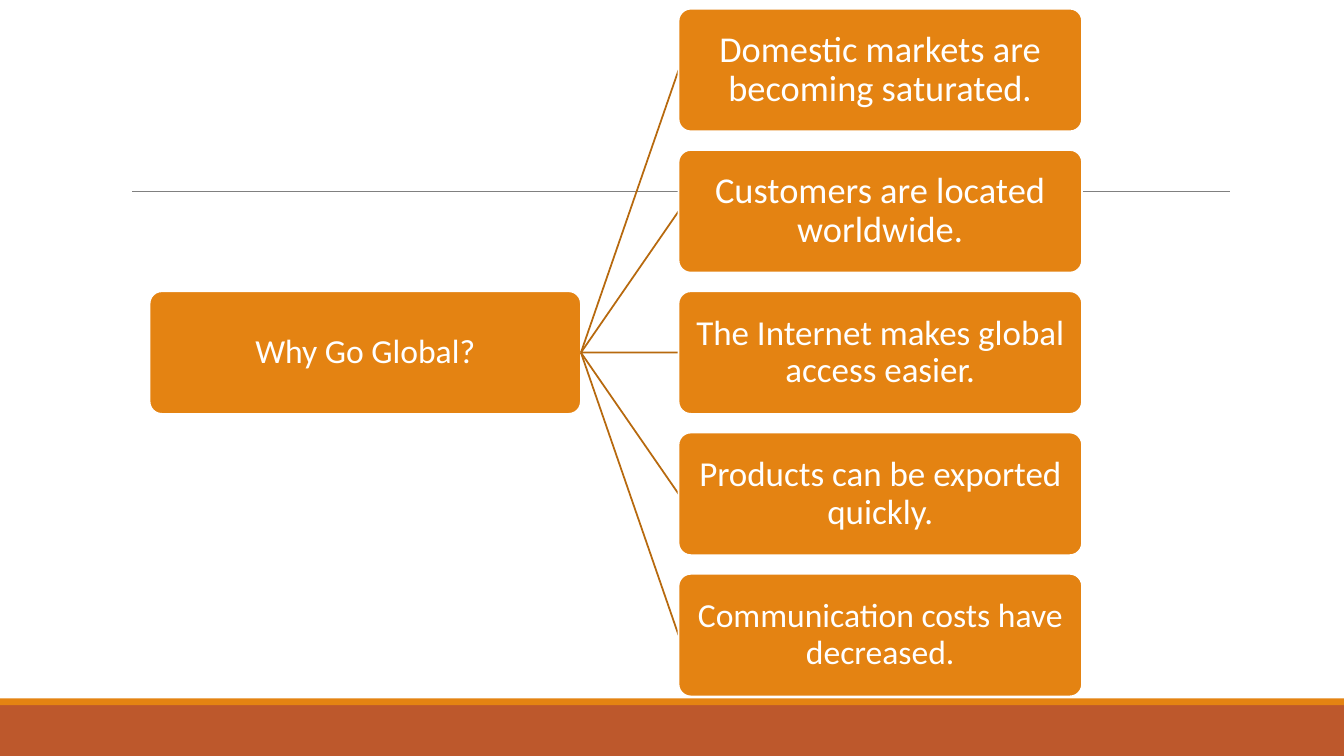
from dataclasses import dataclass

from lxml import etree
from pptx import Presentation
from pptx.dml.color import RGBColor
from pptx.enum.shapes import MSO_CONNECTOR, MSO_SHAPE
from pptx.enum.text import MSO_ANCHOR, PP_ALIGN
from pptx.oxml.ns import qn
from pptx.util import Cm, Pt

RECT = MSO_SHAPE.RECTANGLE
ROUND = MSO_SHAPE.ROUNDED_RECTANGLE
LINE = MSO_CONNECTOR.STRAIGHT
MIDDLE = MSO_ANCHOR.MIDDLE
CENTER = PP_ALIGN.CENTER


@dataclass(frozen=True)
class Theme:
    """Colours, font and sizes of the slide."""
    font: str = "Calibri"
    white: RGBColor = RGBColor(0xFF, 0xFF, 0xFF)
    orange: RGBColor = RGBColor(0xE4, 0x83, 0x12)
    rust: RGBColor = RGBColor(0xBD, 0x58, 0x2C)
    brown: RGBColor = RGBColor(0xB7, 0x69, 0x0E)
    gray: RGBColor = RGBColor(0x80, 0x80, 0x80)
    thin: float = 0.5
    thick: float = 1.25
    small: int = 24
    medium: int = 25
    large: int = 26


THEME = Theme()
WIDTH, HEIGHT = 33.87, 19.05
ROOT = "Why Go Global?"
REASONS = [
    ("Domestic markets are becoming saturated.", THEME.large),
    ("Customers are located worldwide.", THEME.large),
    ("The Internet makes global access easier.", THEME.medium),
    ("Products can be exported quickly.", THEME.medium),
    ("Communication costs have decreased.", THEME.small),
]


def add_block(slide, kind, box, fill):
    """Add a filled shape without outline or shadow."""
    shape = slide.shapes.add_shape(kind, *map(Cm, box))
    shape.shadow.inherit = False
    shape.fill.solid()
    shape.fill.fore_color.rgb = fill
    shape.line.fill.background()
    return shape


def add_line(slide, start, end, color, width):
    """Add a straight line between two points."""
    line = slide.shapes.add_connector(LINE, *map(Cm, (*start, *end)))
    line.line.color.rgb = color
    line.line.width = Pt(width)
    etree.SubElement(line._element.spPr, qn("a:effectLst"))


def add_node(slide, box, text, size):
    """Add a rounded box with centred text."""
    node = add_block(slide, ROUND, box, THEME.orange)
    node.adjustments[0] = 0.1
    node.line.color.rgb = THEME.white
    node.line.width = Pt(THEME.thick)
    frame = node.text_frame
    frame.word_wrap = True
    frame.vertical_anchor = MIDDLE
    frame.margin_left = frame.margin_right = Cm(0.05)
    frame.margin_top = frame.margin_bottom = Cm(0.05)
    para = frame.paragraphs[0]
    para.text = text
    para.alignment = CENTER
    para.line_spacing = 0.9
    para.font.name = THEME.font
    para.font.size = Pt(size)
    para.font.color.rgb = THEME.white


def add_footer(slide, box):
    """Add the two-tone band along the bottom."""
    left, top, width, height = box
    strip = 0.17
    add_block(slide, RECT, (left, top + strip, width, height - strip), THEME.rust)
    add_block(slide, RECT, (left, top, width, strip), THEME.orange)


def add_tree(slide, box):
    """Add the root box at left, linked to a column of reasons."""
    left, top, width, height = box
    root_w, leaf_w, node_h = 10.87, 10.17, 3.09
    step = (height - node_h) / (len(REASONS) - 1)
    middle = top + height / 2
    leaf_x = left + width - leaf_w
    add_node(slide, (left, middle - node_h / 2, root_w, node_h), ROOT, THEME.small)
    for row, (text, size) in enumerate(REASONS):
        leaf_y = top + row * step
        add_line(slide, (left + root_w, middle), (leaf_x, leaf_y + node_h / 2),
                 THEME.brown, THEME.thick)
        add_node(slide, (leaf_x, leaf_y, leaf_w, node_h), text, size)


def main():
    """Build the slide and save it."""
    deck = Presentation()
    deck.slide_width, deck.slide_height = Cm(WIDTH), Cm(HEIGHT)
    slide = deck.slides.add_slide(deck.slide_layouts[6])
    add_footer(slide, (0, 17.6, WIDTH, HEIGHT - 17.6))
    add_line(slide, (3.33, 4.82), (31, 4.82), THEME.gray, THEME.thin)
    add_tree(slide, (3.77, 0.22, 23.5, 17.33))
    deck.save("out.pptx")


if __name__ == "__main__":
    main()
